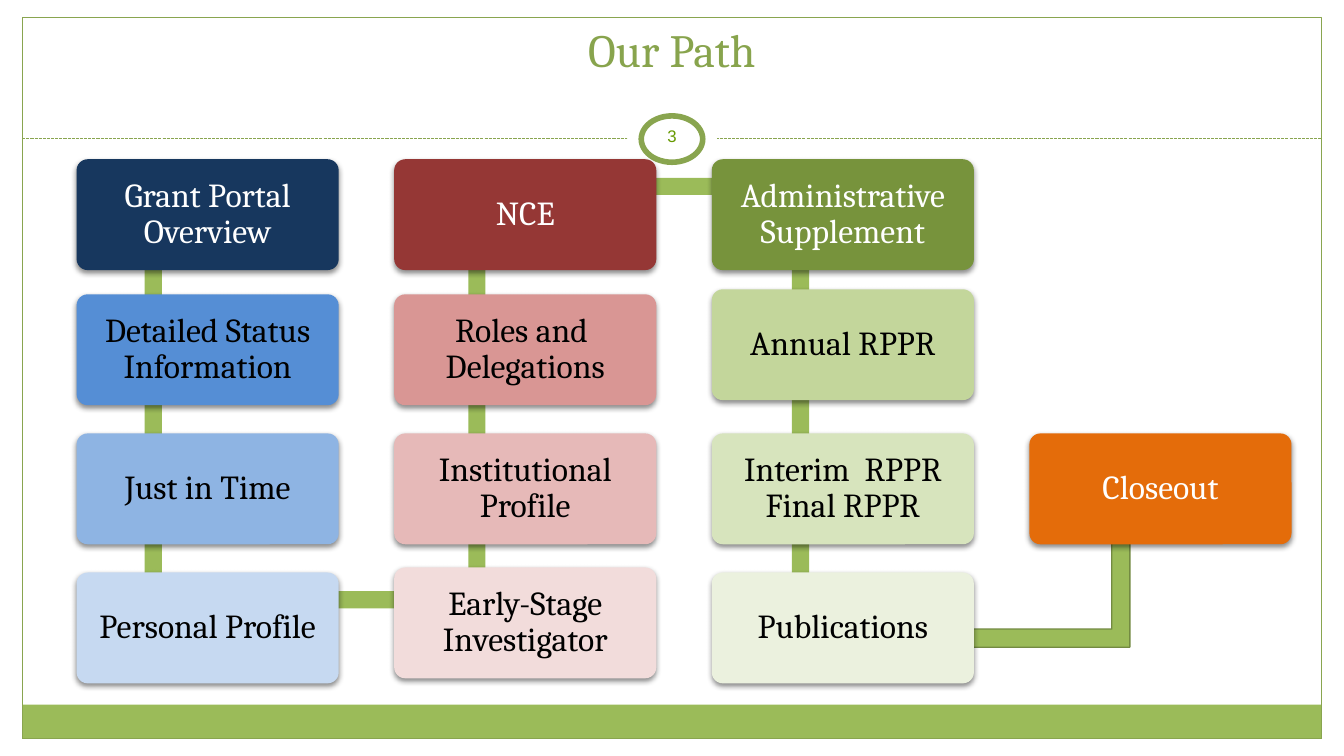
from lxml import etree
from pptx import Presentation
from pptx.dml.color import RGBColor
from pptx.enum.dml import MSO_LINE
from pptx.enum.shapes import MSO_CONNECTOR, MSO_SHAPE
from pptx.enum.text import MSO_ANCHOR, PP_ALIGN
from pptx.oxml.ns import qn
from pptx.util import Inches, Pt

RECT = MSO_SHAPE.RECTANGLE
ROUND = MSO_SHAPE.ROUNDED_RECTANGLE
OVAL = MSO_SHAPE.OVAL
BENT = MSO_SHAPE.BENT_UP_ARROW
STRAIGHT = MSO_CONNECTOR.STRAIGHT
DASH = MSO_LINE.SQUARE_DOT
CENTER = PP_ALIGN.CENTER
TOP, MIDDLE, BOTTOM = MSO_ANCHOR.TOP, MSO_ANCHOR.MIDDLE, MSO_ANCHOR.BOTTOM

WHITE = RGBColor(0xFF, 0xFF, 0xFF)
BLACK = RGBColor(0, 0, 0)
GREEN = RGBColor(0x9B, 0xBB, 0x59)
EDGE = RGBColor(0x89, 0xA5, 0x4F)
DARK = RGBColor(0x73, 0x8A, 0x42)
TITLE = RGBColor(0x88, 0xA4, 0x4D)
NUMBER = RGBColor(0x66, 0x99, 0x00)
NAVY = RGBColor(0x17, 0x37, 0x5E)
BLUES = (RGBColor(0x55, 0x8E, 0xD5), RGBColor(0x8E, 0xB4, 0xE3),
         RGBColor(0xC6, 0xD9, 0xF1))
MAROON = RGBColor(0x95, 0x37, 0x35)
REDS = (RGBColor(0xD9, 0x96, 0x94), RGBColor(0xE6, 0xB9, 0xB8),
        RGBColor(0xF2, 0xDC, 0xDB))
OLIVE = RGBColor(0x77, 0x93, 0x3C)
LIMES = (RGBColor(0xC3, 0xD6, 0x9B), RGBColor(0xD7, 0xE4, 0xBD),
         RGBColor(0xEB, 0xF1, 0xDE))
ORANGE = RGBColor(0xE4, 0x6C, 0x0A)

# Slide and grid, in inches
WIDE, HIGH = 13.33, 7.5
MID = WIDE / 2
EDGE_X, EDGE_Y = 0.22, 0.17
LEFT, PITCH = 0.76, 3.15
ROWS = (1.58, 2.92, 4.3, 5.68)
BOX_W, BOX_H = 2.6, 1.1
BAR = 0.17
NODE_X, NODE_GAP, NODE_Y = 1.52, 3.21, 0.27

# Heading colour, step colours, step names
TRACKS = (
    (NAVY, BLUES, ("Grant Portal Overview", "Detailed Status Information",
                   "Just in Time", "Personal Profile")),
    (MAROON, REDS, ("NCE", "Roles and \vDelegations",
                    "Institutional Profile", "Early-Stage Investigator")),
    (OLIVE, LIMES, ("Administrative Supplement", "Annual RPPR",
                    "Interim  RPPR Final RPPR", "Publications")),
)
# Steps that sit a little above their row: (column, row)
LIFT = {(1, 3): 0.05, (2, 1): 0.05}


def draw(slide, kind, x, y, w, h, fill=None, line=None, weight=0.75):
    shape = slide.shapes.add_shape(
        kind, Inches(x), Inches(y), Inches(w), Inches(h))
    shape.shadow.inherit = False
    if fill is None:
        shape.fill.background()
    else:
        shape.fill.solid()
        shape.fill.fore_color.rgb = fill
    if line is None:
        shape.line.fill.background()
    else:
        shape.line.color.rgb = line
        shape.line.width = Pt(weight)
    return shape


def write(shape, text, size, color, font="Cambria", anchor=MIDDLE):
    frame = shape.text_frame
    frame.word_wrap = True
    frame.vertical_anchor = anchor
    frame.text = text
    para = frame.paragraphs[0]
    para.alignment = CENTER
    for run in para.runs:
        run.font.size = Pt(size)
        run.font.name = font
        run.font.color.rgb = color
    return frame


def label(slide, x, y, w, h, *style, **more):
    box = slide.shapes.add_textbox(Inches(x), Inches(y), Inches(w), Inches(h))
    write(box, *style, **more)


def shade(shape):
    list_ = shape.element.spPr.find(qn("a:effectLst"))
    outer = etree.SubElement(list_, qn("a:outerShdw"), blurRad=str(Pt(4)),
                             dist=str(Pt(2)), dir="5400000", rotWithShape="0")
    tint = etree.SubElement(outer, qn("a:srgbClr"), val="000000")
    etree.SubElement(tint, qn("a:alpha"), val="45000")


def step(slide, col, row, text, fill, color):
    y = ROWS[row] - LIFT.get((col, row), 0)
    box = draw(slide, ROUND, LEFT + col * PITCH, y, BOX_W, BOX_H, fill)
    box.adjustments[0] = 0.1
    shade(box)
    frame = write(box, text, 24, color)
    frame.margin_left = frame.margin_right = Inches(0.1)
    frame.margin_top = frame.margin_bottom = Inches(0.1)
    frame.paragraphs[0].line_spacing = 0.9


def node(col, row):
    return NODE_X + col * NODE_GAP, ROWS[row] + NODE_Y


def link(slide, start, end):
    (x1, y1), (x2, y2) = sorted((node(*start), node(*end)))
    if x1 == x2:
        draw(slide, RECT, x1 - BAR / 2, y1, BAR, y2 - y1, GREEN)
    else:
        draw(slide, RECT, x1, y1 - BAR / 2, x2 - x1, BAR, GREEN)


def rule(slide, y):
    line = slide.shapes.add_connector(
        STRAIGHT, Inches(EDGE_X), Inches(y), Inches(WIDE - EDGE_X), Inches(y))
    line.line.color.rgb = EDGE
    line.line.width = Pt(0.75)
    line.line.dash_style = DASH
    etree.SubElement(line.element.spPr, qn("a:effectLst"))


def frame(slide):
    width = WIDE - 2 * EDGE_X
    draw(slide, RECT, EDGE_X, 6.99, width, 0.34, GREEN)
    draw(slide, RECT, EDGE_X, EDGE_Y, width, HIGH - 2 * EDGE_Y, line=EDGE)
    rule(slide, 1.37)
    # Page number badge
    draw(slide, OVAL, MID - 0.445, 1.05, 0.89, 0.67, WHITE)
    draw(slide, OVAL, MID - 0.305, 1.15, 0.61, 0.46, WHITE, EDGE, 4)
    label(slide, MID - 0.445, 1.2, 0.89, 0.3, "3", 12, NUMBER,
          font="Arial", anchor=TOP)


def main():
    deck = Presentation()
    deck.slide_width, deck.slide_height = Inches(WIDE), Inches(HIGH)
    slide = deck.slides.add_slide(deck.slide_layouts[6])

    frame(slide)
    label(slide, 2, 0.16, 9.33, 0.65, "Our Path", 33, TITLE, anchor=BOTTOM)

    # Path: down, up, down, then across to the closeout
    turn = draw(slide, BENT, 9.08, 5, 2.33, 1.42, GREEN, DARK, 0.9)
    for i, share in enumerate((0.126, 0.206, 0.25)):
        turn.adjustments[i] = share
    for col in range(len(TRACKS)):
        for row in range(len(ROWS) - 1):
            link(slide, (col, row), (col, row + 1))
    link(slide, (0, 3), (1, 3))
    link(slide, (1, 0), (2, 0))

    # Steps
    for col, (head, tints, names) in enumerate(TRACKS):
        for row, (name, fill) in enumerate(zip(names, (head, *tints))):
            step(slide, col, row, name, fill, BLACK if row else WHITE)
    step(slide, len(TRACKS), 2, "Closeout", ORANGE, WHITE)

    deck.save("out.pptx")


if __name__ == "__main__":
    main()
